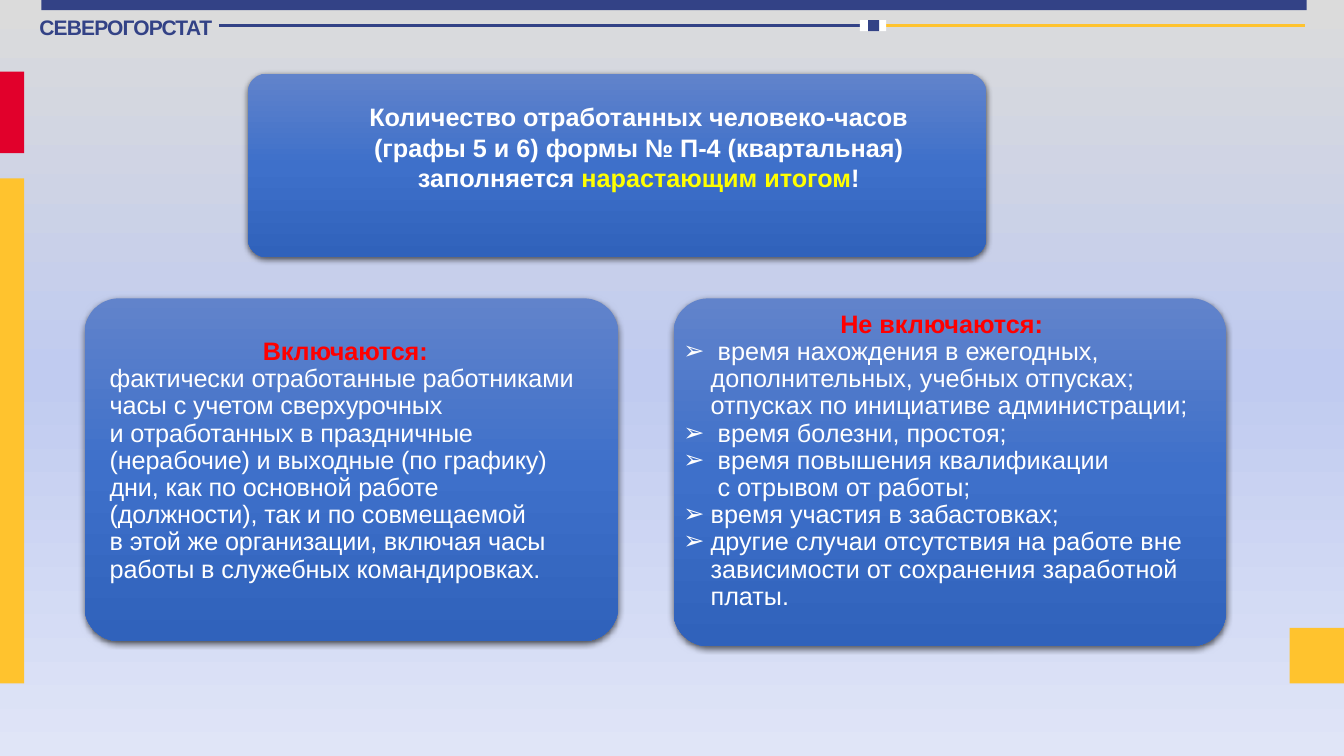
from lxml.etree import SubElement
from pptx import Presentation
from pptx.dml.color import RGBColor
from pptx.enum.shapes import MSO_CONNECTOR as LINK, MSO_SHAPE as SHAPE
from pptx.enum.text import PP_ALIGN as ALIGN
from pptx.oxml import parse_xml
from pptx.oxml.ns import nsdecls, qn
from pptx.util import Inches, Pt

NAVY = RGBColor(0x33, 0x42, 0x86)
GOLD = RGBColor(0xFF, 0xC3, 0x2E)
CRIMSON = RGBColor(0xE1, 0x00, 0x2B)
RED = RGBColor(0xFF, 0x00, 0x00)
YELLOW = RGBColor(0xFF, 0xFF, 0x00)
WHITE = RGBColor(0xFF, 0xFF, 0xFF)
SKY = [RGBColor(0xDB, 0xDB, 0xDB), RGBColor(0xC0, 0xCB, 0xF0), RGBColor(0xE0, 0xE5, 0xF7)]
BLUE = [RGBColor(0x61, 0x83, 0xCB), RGBColor(0x3E, 0x70, 0xCA), RGBColor(0x30, 0x62, 0xBB)]
SHADOW = (f'<a:effectLst {nsdecls("a")}><a:outerShdw blurRad="57150" dist="19050" '
          'dir="5400000" algn="ctr" rotWithShape="0"><a:srgbClr val="000000">'
          '<a:alpha val="63000"/></a:srgbClr></a:outerShdw></a:effectLst>')


def shade(fill, root, tones):
    """Fill from top to bottom with evenly spaced tones; root holds the fill's XML."""
    fill.gradient()
    fill.gradient_angle = 270
    stops = root.find(".//" + qn("a:gsLst"))
    for stop in list(stops):
        stops.remove(stop)
    for i, tone in enumerate(tones):
        stop = SubElement(stops, qn("a:gs"), pos=str(i * 50000))
        SubElement(stop, qn("a:srgbClr"), val=str(tone))


def write(place, top, paras, size=18, track=0):
    """Add a text box; each paragraph is (align, line spacing, runs), track is in points."""
    frame = shapes.add_textbox(*map(Inches, place)).text_frame
    frame.word_wrap = True
    frame.margin_top = Inches(top)
    for i, (align, gap, runs) in enumerate(paras):
        para = frame.paragraphs[0] if i == 0 else frame.add_paragraph()
        para.alignment, para.line_spacing = align, gap
        for text, tint, bold in runs:
            for j, line in enumerate(text.split("\n")):
                if j:
                    para.add_line_break()
                run = para.add_run()
                run.text = line
                font = run.font
                font.name, font.size, font.bold = "Arial", Pt(size), bold
                font.color.rgb = tint
                run._r.get_or_add_rPr().set("spc", str(round(track * 100)))
    return frame


prs = Presentation()
prs.slide_width, prs.slide_height = Inches(13.33), Inches(7.5)
slide = prs.slides.add_slide(prs.slide_layouts[6])
shapes = slide.shapes
shade(slide.background.fill, slide.element, SKY)

# Header rules
for start, end, tint in [(2.17, 8.54, NAVY), (8.72, 12.94, GOLD)]:
    rule = shapes.add_connector(LINK.STRAIGHT, Inches(start), Inches(0.25), Inches(end), Inches(0.25))
    rule.line.color.rgb, rule.line.width = tint, Pt(2)
    SubElement(rule.element.spPr, qn("a:effectLst"))

# Flat bars and blocks
bars = [
    (0.41, 0, 12.55, 0.1, NAVY),
    (0, 0.71, 0.24, 0.81, CRIMSON),
    (0, 1.77, 0.24, 5.01, GOLD),
    (12.79, 6.23, 0.54, 0.55, GOLD),
    (8.53, 0.2, 0.26, 0.11, WHITE),
    (8.61, 0.2, 0.11, 0.11, NAVY),
]
for *place, tint in bars:
    bar = shapes.add_shape(SHAPE.RECTANGLE, *map(Inches, place))
    bar.shadow.inherit = False
    bar.fill.solid()
    bar.fill.fore_color.rgb = tint
    bar.line.fill.background()

# Rounded panels
for place in [(6.68, 2.96, 5.48, 3.45), (0.84, 2.96, 5.29, 3.4), (2.46, 0.73, 7.32, 1.82)]:
    panel = shapes.add_shape(SHAPE.ROUNDED_RECTANGLE, *map(Inches, place))
    panel.adjustments[0] = 0.1
    shade(panel.fill, panel.element, BLUE)
    panel.line.fill.background()
    panel.element.spPr.append(parse_xml(SHADOW))

# Office name
name = write((0.39, 0.13, 1.78, 0.27), 0.01,
             [(ALIGN.LEFT, 1.0, [("СЕВЕРОГОРСТАТ", NAVY, True)])], size=15, track=-0.6)
name.margin_left = name.margin_right = name.margin_bottom = 0

# Title
write((2.46, 0.65, 7.75, 1.31), 0.36, [
    (ALIGN.CENTER, 1.0, [("Количество отработанных человеко-часов", WHITE, True)]),
    (ALIGN.CENTER, 1.0, [("(графы 5 и 6) формы № П-4 (квартальная)", WHITE, True)]),
    (ALIGN.CENTER, 1.0, [("заполняется ", WHITE, True), ("нарастающим итогом", YELLOW, True),
                         ("!", WHITE, True)]),
])

# Included hours
write((0.99, 2.48, 4.87, 3.63), 0.85, [
    (ALIGN.CENTER, 1.0, [("Включаются:", RED, True)]),
    (ALIGN.LEFT, 0.9, [(
        "фактически отработанные работниками часы с учетом сверхурочных \n"
        "и отработанных в праздничные (нерабочие) и выходные (по графику) дни, "
        "как по основной работе (должности), так и по совмещаемой \n"
        "в этой же организации, включая часы работы в служебных командировках.",
        WHITE, False)]),
], track=-0.1)

# Excluded hours
items = [
    " время нахождения в ежегодных,\nдополнительных, учебных отпусках;\n"
    "отпусках по инициативе администрации;",
    " время болезни, простоя;",
    " время повышения квалификации\n с отрывом от работы;",
    "время участия в забастовках;",
    "другие случаи отсутствия на работе вне\nзависимости от сохранения заработной\nплаты.",
]
right = write((6.68, 3.01, 5.32, 3.13), 0.05,
              [(ALIGN.CENTER, 1.0, [("Не включаются:", RED, True)])]
              + [(ALIGN.LEFT, 0.9, [(item, WHITE, False)]) for item in items])
for para in right.paragraphs[1:]:
    props = para._p.get_or_add_pPr()
    props.set("marL", str(Inches(0.27)))
    props.set("indent", str(-Inches(0.27)))
    SubElement(props, qn("a:buFont"), typeface="Arial")
    SubElement(props, qn("a:buChar"), char="➢")

prs.save("out.pptx")
